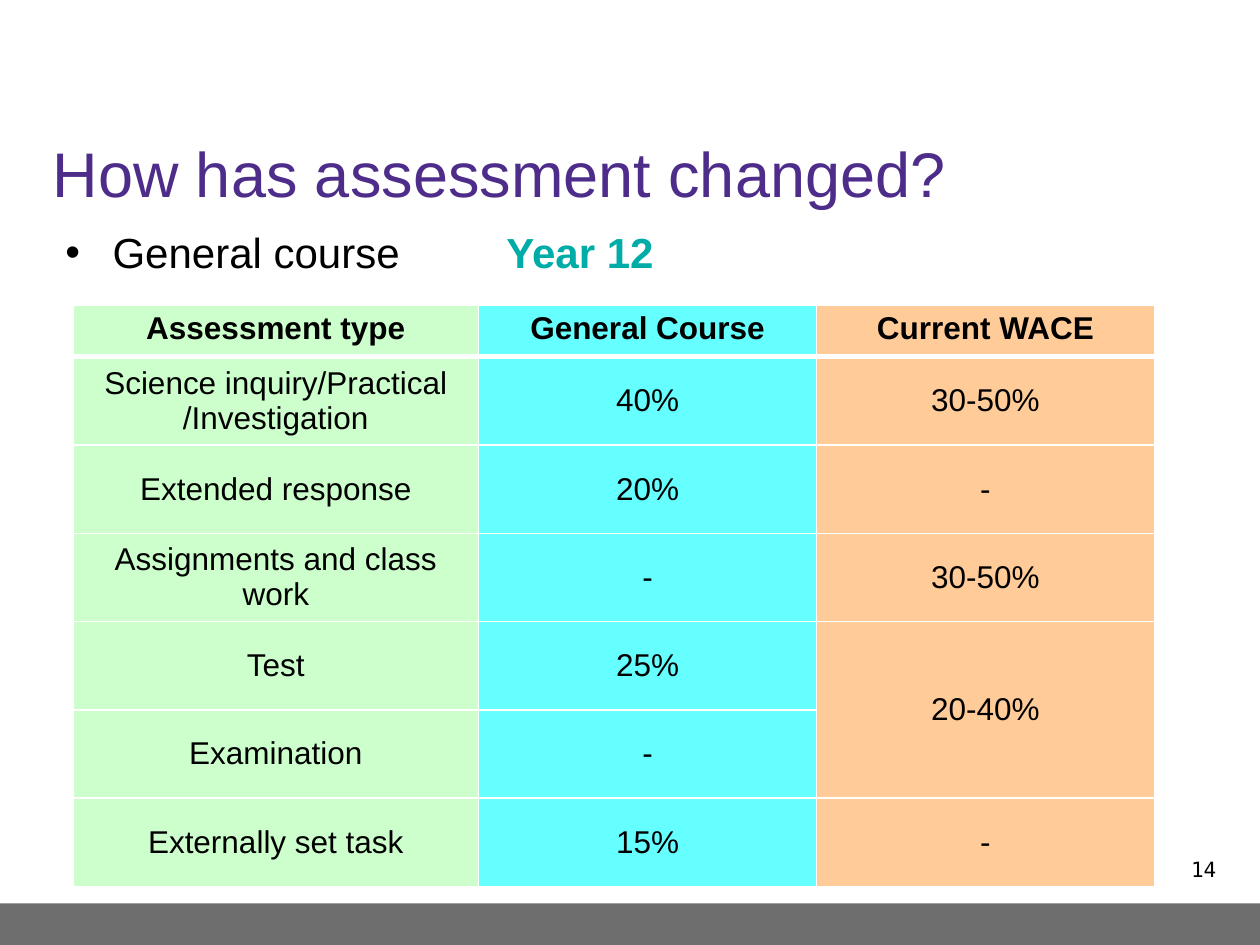
from pptx import Presentation
from pptx.dml.color import RGBColor
from pptx.enum.shapes import MSO_SHAPE as Shape
from pptx.enum.text import MSO_ANCHOR as Anchor, PP_ALIGN as Align
from pptx.oxml import parse_xml
from pptx.oxml.ns import nsdecls
from pptx.util import Cm, Pt

FONT, BLACK, WHITE = "Arial", "000000", "FFFFFF"
COLUMNS = [(8.18, "CCFFCC"), (6.81, "66FFFF"), (6.81, "FFCC99")]
ROWS = [
    ("Assessment type", "General Course", "Current WACE"),
    ("Science inquiry/Practical\n/Investigation", "40%", "30-50%"),
    ("Extended response", "20%", "-"),
    ("Assignments and class work", "-", "30-50%"),
    ("Test", "25%", "20-40%"),
    ("Examination", "-", ""),
    ("Externally set task", "15%", "-"),
]


def color(value):
    return RGBColor.from_string(value)


class SlideBuilder:
    """Holds the text style and the current page, and adds elements to it."""

    def __init__(self, page):
        self.page = page

    def style(self, font, size, ink=BLACK, bold=False, name=FONT):
        font.name, font.size, font.bold = name, Pt(size), bold
        font.color.rgb = color(ink)

    def bar(self, left, top, width, height, fill):
        bar = self.page.shapes.add_shape(
            Shape.RECTANGLE, Cm(left), Cm(top), Cm(width), Cm(height))
        bar.shadow.inherit = False
        bar.fill.solid()
        bar.fill.fore_color.rgb = color(fill)
        bar.line.fill.background()

    def text(self, left, top, width, height, words, size, ink=BLACK,
             name=FONT, align=Align.LEFT, anchor=Anchor.TOP):
        box = self.page.shapes.add_textbox(Cm(left), Cm(top), Cm(width), Cm(height))
        frame = box.text_frame
        frame.word_wrap, frame.vertical_anchor = True, anchor
        frame.text = words
        para = frame.paragraphs[0]
        para.alignment = align
        for span in para.runs:
            self.style(span.font, size, ink, name=name)
        return para

    def bullet(self, para, indent):
        properties = para._p.get_or_add_pPr()
        properties.set("marL", str(Cm(indent)))
        properties.set("indent", str(-Cm(indent)))
        properties.append(parse_xml(f'<a:buFont {nsdecls("a")} typeface="{FONT}"/>'))
        properties.append(parse_xml(f'<a:buChar {nsdecls("a")} char="•"/>'))

    def borders(self, cell, widths):
        properties = cell._tc.get_or_add_tcPr()
        for side, width in zip("LRTB", widths):
            properties.append(parse_xml(
                f'<a:ln{side} {nsdecls("a")} w="{Pt(width)}"><a:solidFill>'
                f'<a:srgbClr val="{WHITE}"/></a:solidFill></a:ln{side}>'))

    def cell(self, cell, words, fill, header, top, bottom):
        self.borders(cell, (1, 1, top, bottom))
        cell.fill.solid()
        cell.fill.fore_color.rgb = color(fill)
        cell.vertical_anchor = Anchor.TOP if header else Anchor.MIDDLE
        cell.text_frame.text = words
        for para in cell.text_frame.paragraphs:
            para.alignment = Align.CENTER
            for span in para.runs:
                self.style(span.font, 18, bold=header)

    def table(self, left, top, header_height, row_height):
        width = sum(size for size, _ in COLUMNS)
        height = header_height + row_height * (len(ROWS) - 1)
        table = self.page.shapes.add_table(
            len(ROWS), len(COLUMNS), Cm(left), Cm(top), Cm(width), Cm(height)).table
        table.horz_banding = False
        for column, (size, _) in zip(table.columns, COLUMNS):
            column.width = Cm(size)
        for index, words in enumerate(ROWS):
            header = index == 0
            table.rows[index].height = Cm(header_height if header else row_height)
            for number, (_, fill) in enumerate(COLUMNS):
                self.cell(table.cell(index, number), words[number], fill, header,
                          3 if index == 1 else 1, 3 if header else 1)
        return table


def main():
    deck = Presentation()
    deck.slide_width, deck.slide_height = Cm(25.4), Cm(19.05)
    builder = SlideBuilder(deck.slides.add_slide(deck.slide_layouts[6]))
    builder.bar(0, 18.21, 25.4, 0.84, "6E6E6E")
    builder.text(0.81, 2.31, 23.75, 2.34, "How has assessment changed?", 36,
                 "4D2C8A", anchor=Anchor.MIDDLE)
    course = builder.text(1.07, 4.45, 23.7, 1.57, "General course\t\t", 24)
    builder.bullet(course, 0.95)
    course.space_after = Pt(6)
    year = course.add_run()
    year.text = "Year 12"
    builder.style(year.font, 24, "00ACA8", bold=True)
    builder.text(18.85, 17.15, 5.92, 1.17, "14", 12,
                 name="DejaVu Sans Mono", align=Align.RIGHT)
    table = builder.table(1.47, 6.15, 1.04, 1.78)
    table.cell(4, 2).merge(table.cell(5, 2))
    deck.save("out.pptx")


if __name__ == "__main__":
    main()
